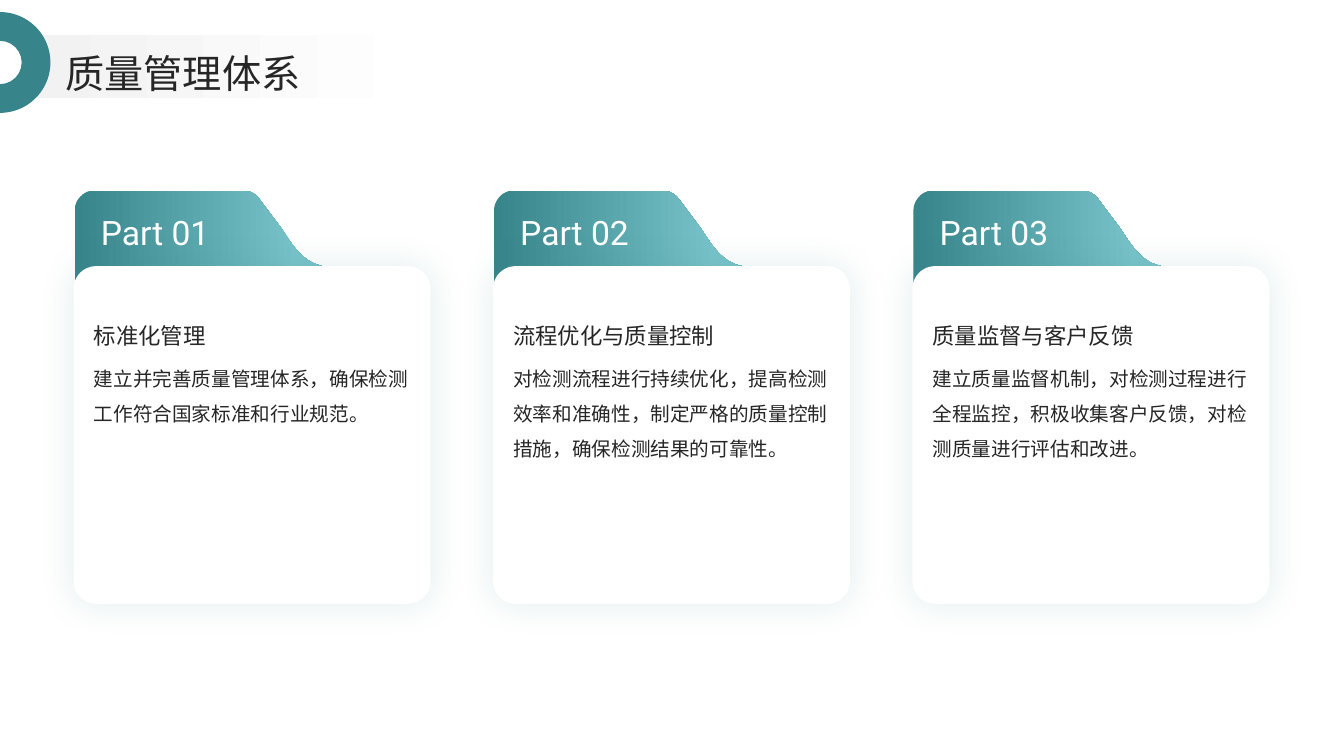
from lxml.etree import SubElement
from pptx import Presentation
from pptx.dml.color import RGBColor
from pptx.enum.shapes import MSO_SHAPE as SHAPE
from pptx.enum.text import MSO_ANCHOR as ANCHOR
from pptx.oxml.ns import qn
from pptx.util import Inches, Pt

CJK_FONT = "Noto Sans CJK SC"
TEAL, AQUA, INK, WHITE, GREY = "37858B", "77C3C9", "262626", "FFFFFF", "F2F2F2"

CARD_LEFT, CARD_TOP, CARD_PITCH = 0.73, 2.64, 4.16
CARD_WIDTH, CARD_HEIGHT = 3.54, 3.35
TAB_HEIGHT, TEXT_INSET = 0.75, 0.2

CARDS = [
    ("Part 01", "标准化管理", "建立并完善质量管理体系，确保检测工作符合国家标准和行业规范。"),
    ("Part 02", "流程优化与质量控制",
     "对检测流程进行持续优化，提高检测效率和准确性，制定严格的质量控制措施，确保检测结果的可靠性。"),
    ("Part 03", "质量监督与客户反馈",
     "建立质量监督机制，对检测过程进行全程监控，积极收集客户反馈，对检测质量进行评估和改进。"),
]

TAB_START = (2.46, 0.75)
TAB_OUTLINE = [
    [(0, 1.11)],
    [(0, 0.2)],
    [(0, 0.09), (0.09, 0), (0.2, 0)],
    [(1.67, 0)],
    [(1.73, 0), (1.79, 0.03), (1.83, 0.08)],
    [(2.04, 0.36)],
    [(2.14, 0.5), (2.24, 0.71), TAB_START],
]


def color(value):
    return RGBColor.from_string(value)


def paint(shape, *stops):
    shape.shadow.inherit = False
    shape.line.fill.background()
    if len(stops) == 1:
        shape.fill.solid()
        shape.fill.fore_color.rgb = color(stops[0])
        return
    shape.fill.gradient()
    shape.fill.gradient_angle = 0
    for stop, (position, value) in zip(shape.fill.gradient_stops, stops):
        stop.position = position
        stop.color.rgb = color(value)


def add_shape(page, kind, box, *stops):
    shape = page.shapes.add_shape(kind, *map(Inches, box))
    paint(shape, *stops)
    return shape


def add_glow(shape, value):
    effects = shape._element.spPr.find(qn("a:effectLst"))
    shadow = SubElement(effects, qn("a:outerShdw"), blurRad=str(Pt(25)), dist="0",
                        dir="5400000", algn="t", rotWithShape="0")
    tint = SubElement(shadow, qn("a:srgbClr"), val=value)
    SubElement(tint, qn("a:alpha"), val="15000")


def add_text(page, box, text, size, font=CJK_FONT, ink=INK, spacing=1.1,
             anchor=ANCHOR.MIDDLE):
    frame = page.shapes.add_textbox(*map(Inches, box)).text_frame
    frame.word_wrap = True
    frame.vertical_anchor = anchor
    frame.margin_left = frame.margin_right = frame.margin_top = frame.margin_bottom = 0
    para = frame.paragraphs[0]
    para.line_spacing = spacing
    span = para.add_run()
    span.text = text
    span.font.size = Pt(size)
    span.font.color.rgb = color(ink)
    span.font.name = font
    SubElement(span.font._element, qn("a:ea"), typeface=font)


def curve_points(start, controls, steps=12):
    first, second, end = controls
    for step in range(1, steps + 1):
        t = step / steps
        weights = ((1 - t) ** 3, 3 * t * (1 - t) ** 2, 3 * t * t * (1 - t), t ** 3)
        yield tuple(sum(weight * point[axis] for weight, point
                        in zip(weights, (start, first, second, end))) for axis in (0, 1))


def add_tab(page, left, top):
    points = [TAB_START]
    for segment in TAB_OUTLINE:
        points += segment if len(segment) == 1 else curve_points(points[-1], segment)
    start, *others = [(Inches(left + x), Inches(top + y)) for x, y in points]
    builder = page.shapes.build_freeform(*start)
    builder.add_line_segments(others, close=True)
    paint(builder.convert_to_shape(), (0, TEAL), (0.9, AQUA))


def add_card(page, box, label, heading, body):
    left, top, width, height = box
    add_tab(page, left + 0.01, top - TAB_HEIGHT)
    panel = add_shape(page, SHAPE.ROUNDED_RECTANGLE, box, WHITE)
    panel.adjustments[0] = 0.067
    add_glow(panel, TEAL)
    add_text(page, (left + 0.27, top - 0.55, 1.55, 0.39), label, 24,
             font="Roboto", ink=WHITE)
    text_left, text_width = left + TEXT_INSET, width - 2 * TEXT_INSET + 0.01
    add_text(page, (text_left, top + 0.1, text_width, 0.72), heading, 16,
             spacing=1.3, anchor=ANCHOR.BOTTOM)
    add_text(page, (text_left, top + 0.88, text_width, height - 1.18), body, 14,
             spacing=1.5, anchor=ANCHOR.TOP)


def add_header(page, box, title):
    left, top, width, height = box
    add_shape(page, SHAPE.RECTANGLE, box, (0, GREY), (0.8, WHITE))
    add_text(page, (left + 0.32, top + 0.09, 11.88, 0.51), title, 28)
    ring = add_shape(page, SHAPE.BLOCK_ARC, (-0.5, top - 0.23, 1, 1), TEAL)
    ring.rotation = 90
    for index, value in enumerate((108, 0, 0.285)):
        ring.adjustments[index] = value


def main():
    deck = Presentation()
    deck.slide_width, deck.slide_height = Inches(13.33), Inches(7.5)
    page = deck.slides.add_slide(deck.slide_layouts[6])
    for column, content in enumerate(CARDS):
        left = CARD_LEFT + column * CARD_PITCH
        add_card(page, (left, CARD_TOP, CARD_WIDTH, CARD_HEIGHT), *content)
    add_header(page, (0.33, 0.35, 4.92, 0.62), "质量管理体系")
    deck.save("out.pptx")


if __name__ == "__main__":
    main()
